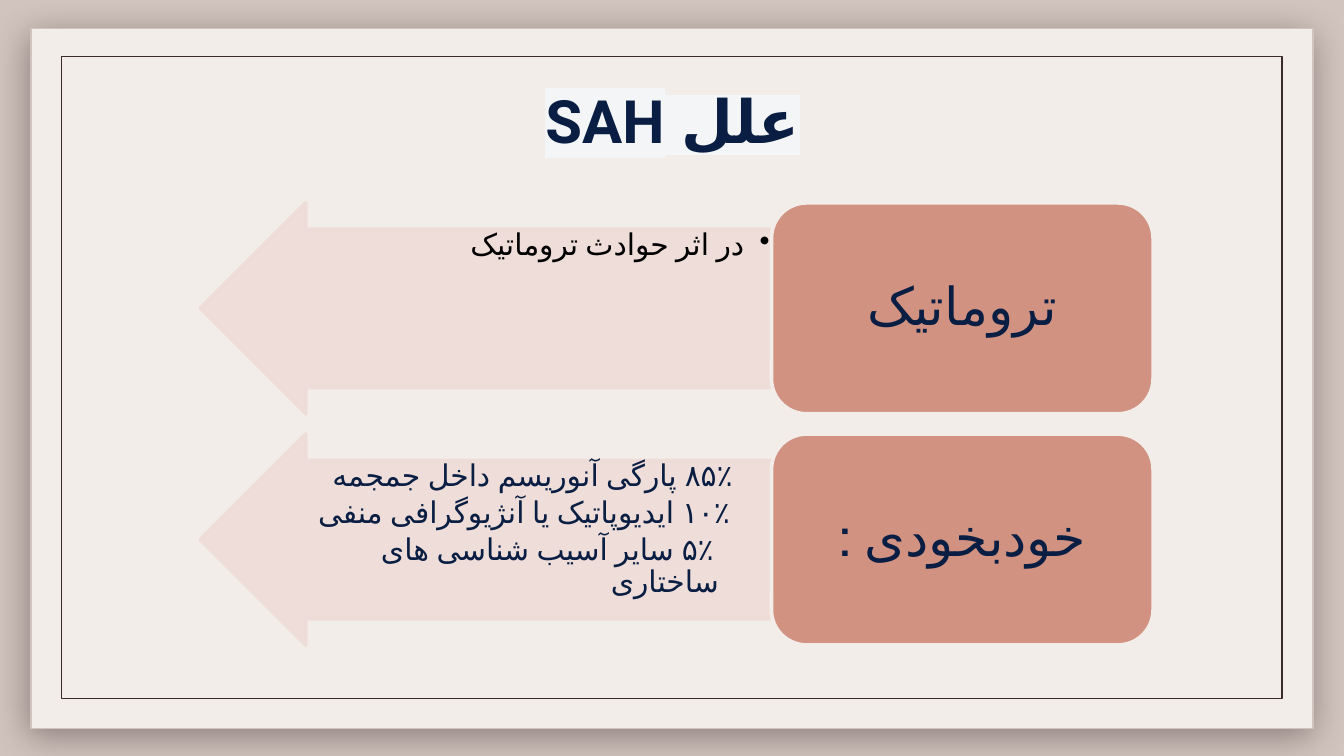
from lxml import etree
from pptx import Presentation
from pptx.dml.color import RGBColor
from pptx.enum.shapes import MSO_SHAPE
from pptx.enum.text import MSO_ANCHOR, PP_ALIGN
from pptx.oxml.ns import qn
from pptx.util import Inches, Pt

RECTANGLE = MSO_SHAPE.RECTANGLE
ROUNDED = MSO_SHAPE.ROUNDED_RECTANGLE
LEFT_ARROW = MSO_SHAPE.LEFT_ARROW
CENTER, RIGHT = PP_ALIGN.CENTER, PP_ALIGN.RIGHT
TOP, MIDDLE = MSO_ANCHOR.TOP, MSO_ANCHOR.MIDDLE

BACKGROUND = RGBColor(0xD1, 0xC4, 0xBE)
PAPER = RGBColor(0xF3, 0xED, 0xEA)
BROWN = RGBColor(0x3A, 0x2A, 0x2A)
NAVY = RGBColor(0x09, 0x1E, 0x42)
BLACK = RGBColor(0, 0, 0)
HIGHLIGHT = RGBColor(0xF4, 0xF5, 0xF7)
PINK = RGBColor(0xEE, 0xDC, 0xD8)
TERRACOTTA = RGBColor(0xD1, 0x92, 0x82)

CAUSES = [
    ("تروماتیک", "Arial", BLACK, [("در اثر حوادث تروماتیک", 0.19, -0.19, "•")]),
    ("خودبخودی :", "Roboto", NAVY, [
        ("۸۵٪ پارگی آنوریسم داخل جمجمه", 0.28, 0, None),
        ("۱۰٪ ایدیوپاتیک یا آنژیوگرافی منفی", 0.3, 0, None),
        ("۵٪ سایر آسیب شناسی های ساختاری", 0.38, 0.04, None),
    ]),
]
FIRST_ROW, ROW_STEP = 1.51, 1.72


def add_element(parent, tag, **attributes):
    return etree.SubElement(parent, qn(tag), attributes)


class SlideBuilder:
    def __init__(self, presentation):
        self.slide = presentation.slides.add_slide(presentation.slide_layouts[6])
        fill = self.slide.background.fill
        fill.solid()
        fill.fore_color.rgb = BACKGROUND

    def shape(self, kind, box, fill, line, width, opacity=None):
        shape = self.slide.shapes.add_shape(kind, *map(Inches, box))
        if fill is None:
            shape.fill.background()
        else:
            shape.fill.solid()
            shape.fill.fore_color.rgb = fill
        shape.line.color.rgb = line
        shape.line.width = Pt(width)
        shape.shadow.inherit = False
        if opacity:
            for color in shape.element.spPr.iter(qn("a:srgbClr")):
                add_element(color, "a:alpha", val=str(opacity * 1000))
        return shape

    def drop_shadow(self, shape):
        effects = shape.element.spPr.find(qn("a:effectLst"))
        shadow = add_element(effects, "a:outerShdw", blurRad=str(Pt(19.1)),
                             dist=str(Pt(4.5)), dir=str(105 * 60000),
                             algn="ctr", rotWithShape="0")
        color = add_element(shadow, "a:srgbClr", val=str(BROWN))
        add_element(color, "a:alpha", val="45000")

    def text_box(self, box):
        return self.slide.shapes.add_textbox(*map(Inches, box))

    def frame(self, shape, anchor, horizontal, vertical):
        frame = shape.text_frame
        frame.word_wrap = True
        frame.vertical_anchor = anchor
        frame.margin_left = frame.margin_right = Inches(horizontal)
        frame.margin_top = frame.margin_bottom = Inches(vertical)
        return frame

    def paragraph(self, paragraph, text, size, font, color, align,
                  margin=0, indent=0, bullet=None, spacing=0.9,
                  bold=False, highlight=None):
        properties = paragraph._p.get_or_add_pPr()
        properties.set("rtl", "1")
        properties.set("marL", str(Inches(margin)))
        properties.set("indent", str(Inches(indent)))
        paragraph.alignment = align
        paragraph.line_spacing = spacing
        paragraph.space_after = Pt(size * 0.15)
        if bullet:
            add_element(properties, "a:buChar", char=bullet)
        run = paragraph.add_run()
        run.text = text
        run.font.size = Pt(size)
        run.font.bold = bold
        run.font.color.rgb = color
        run_properties = run._r.get_or_add_rPr()
        run_properties.set("lang", "fa-IR")
        if highlight:
            marker = add_element(run_properties, "a:highlight")
            add_element(marker, "a:srgbClr", val=str(highlight))
        run.font.name = font

    def title(self, text):
        frame = self.frame(self.text_box((0.79, 0.52, 8.43, 0.63)), TOP, 0.1, 0.1)
        self.paragraph(frame.paragraphs[0], text, 32, "Roboto", NAVY, CENTER,
                       spacing=1.0, bold=True, highlight=HIGHLIGHT)

    def cause(self, top, name, font, color, details):
        arrow = self.shape(LEFT_ARROW, (1.49, top, 4.25, 1.57), PINK, PINK, 2, 90)
        arrow.adjustments[0] = 0.75
        arrow.adjustments[1] = 0.5
        frame = self.frame(self.text_box((2.08, top + 0.19, 3.66, 1.18)),
                           TOP, 0.01, 0.01)
        for index, (text, margin, indent, bullet) in enumerate(details):
            paragraph = frame.add_paragraph() if index else frame.paragraphs[0]
            self.paragraph(paragraph, text, 16, font, color, RIGHT,
                           margin, indent, bullet)
        label = self.shape(ROUNDED, (5.74, top, 2.84, 1.57), TERRACOTTA, PAPER, 2)
        frame = self.frame(label, MIDDLE, 0.12, 0.06)
        self.paragraph(frame.paragraphs[0], name, 28, "Arial", NAVY, CENTER)


def main():
    presentation = Presentation()
    presentation.slide_width = Inches(10)
    presentation.slide_height = Pt(405)
    builder = SlideBuilder(presentation)
    paper = builder.shape(RECTANGLE, (0.23, 0.21, 9.54, 5.21), PAPER, BACKGROUND, 0.75)
    builder.drop_shadow(paper)
    builder.shape(RECTANGLE, (0.46, 0.42, 9.08, 4.78), None, BROWN, 0.75)
    builder.title("علل SAH")
    for row, cause in enumerate(CAUSES):
        builder.cause(FIRST_ROW + row * ROW_STEP, *cause)
    presentation.save("out.pptx")


if __name__ == "__main__":
    main()
